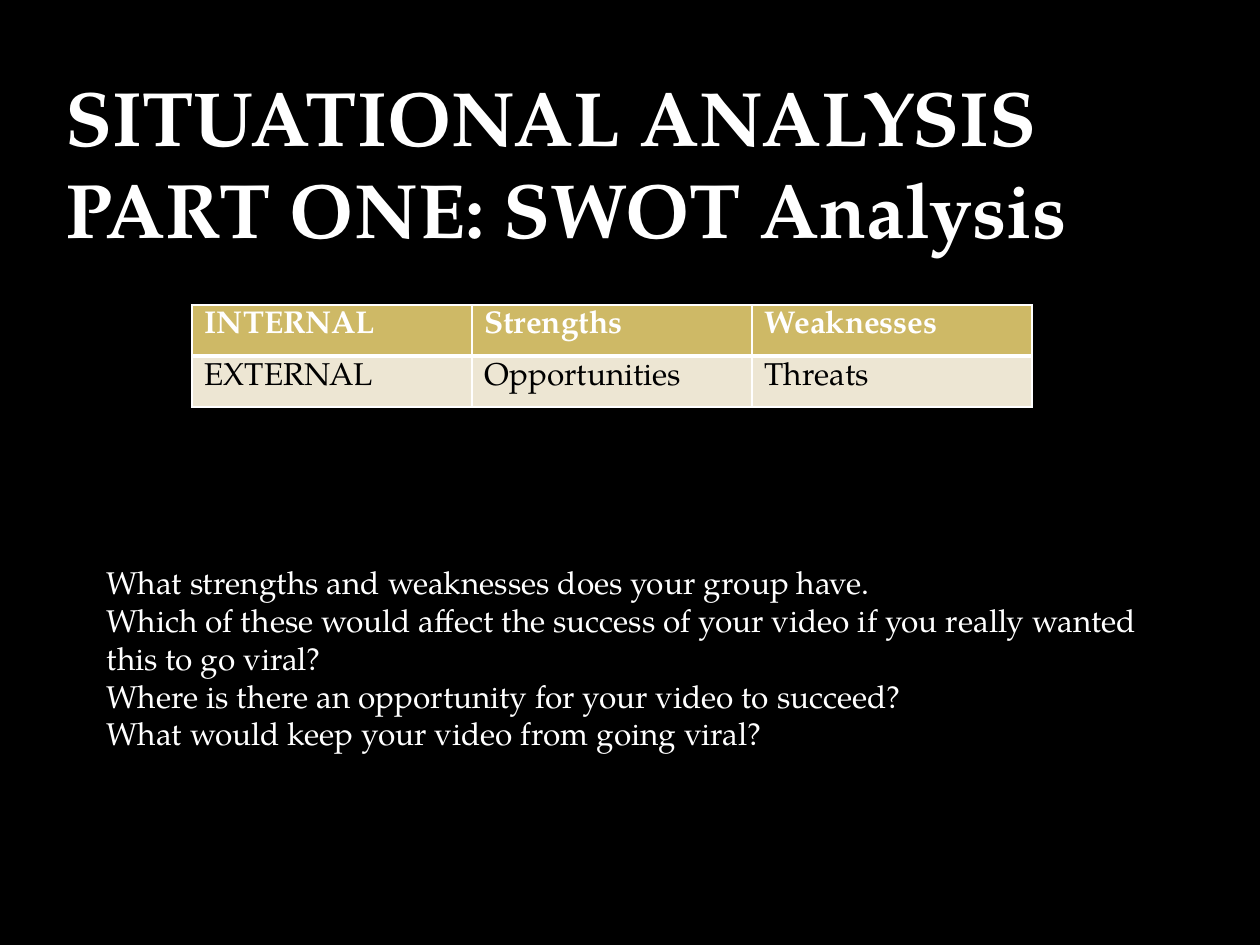
import pptx
import pptx.dml.color
import pptx.enum.text
import pptx.oxml.ns
import pptx.util
from lxml import etree

EMU_PER_PX = 914400 // 126
FONT = "TeX Gyre Pagella"
COLORS = {"background": "000000", "light": "FFFFFF", "dark": "000000",
          "header": "CEB966", "body": "EDE6D3"}
TITLE = ["SITUATIONAL ANALYSIS", "PART ONE: SWOT Analysis"]
SWOT = [["INTERNAL", "Strengths", "Weaknesses"],
        ["EXTERNAL", "Opportunities", "Threats"]]
QUESTIONS = [
    "What strengths and weaknesses does your group have.",
    "Which of these would affect the success of your video if you really wanted this to go viral?",
    "Where is there an opportunity for your video to succeed?",
    "What would keep your video from going viral?",
]


def px(length):
    return pptx.util.Emu(length * EMU_PER_PX)


def color(name):
    return pptx.dml.color.RGBColor.from_string(COLORS[name])


def write_text(text_frame, lines, size=18, fill="light", bold=False):
    for index, line in enumerate(lines):
        paragraph = text_frame.paragraphs[0] if index == 0 else text_frame.add_paragraph()
        paragraph.alignment = pptx.enum.text.PP_ALIGN.LEFT
        paragraph.line_spacing = 1.0
        paragraph.space_before = pptx.util.Pt(0)
        run = paragraph.add_run()
        run.text = line
        run.font.name = FONT
        run.font.size = pptx.util.Pt(size)
        run.font.bold = bold
        run.font.color.rgb = color(fill)


def place(shape, left, top, width, height):
    shape.left, shape.top = px(left), px(top)
    shape.width, shape.height = px(width), px(height)


def add_title(slide):
    title = slide.shapes.title
    place(title, 53, 63, 1045, 199)
    text_frame = title.text_frame
    text_frame.word_wrap = False
    text_frame.auto_size = pptx.enum.text.MSO_AUTO_SIZE.SHAPE_TO_FIT_TEXT
    text_frame.vertical_anchor = pptx.enum.text.MSO_ANCHOR.TOP
    write_text(text_frame, TITLE, size=44, bold=True)


def add_border(cell, side, width):
    properties = cell._tc.get_or_add_tcPr()
    line = etree.SubElement(properties, pptx.oxml.ns.qn(f"a:ln{side}"),
                            w=str(pptx.util.Pt(width)))
    fill = etree.SubElement(line, pptx.oxml.ns.qn("a:solidFill"))
    etree.SubElement(fill, pptx.oxml.ns.qn("a:srgbClr"), val=COLORS["light"])


def format_cell(cell, text, is_header):
    widths = {"L": 1, "R": 1, "T": 1 if is_header else 3, "B": 3 if is_header else 1}
    for side, width in widths.items():
        add_border(cell, side, width)
    cell.fill.solid()
    cell.fill.fore_color.rgb = color("header" if is_header else "body")
    write_text(cell.text_frame, [text], fill="light" if is_header else "dark", bold=is_header)


def add_swot_table(slide):
    column_width, row_height = 280, 51
    rows, columns = len(SWOT), len(SWOT[0])
    table = slide.shapes.add_table(rows, columns, px(192), px(305),
                                   px(column_width * columns), px(row_height * rows)).table
    for column in table.columns:
        column.width = px(column_width)
    for row_index, labels in enumerate(SWOT):
        table.rows[row_index].height = px(row_height)
        for column_index, label in enumerate(labels):
            format_cell(table.cell(row_index, column_index), label, row_index == 0)


def add_questions(slide):
    text_box = slide.shapes.add_textbox(px(94), px(557), px(1092), px(242))
    text_box.text_frame.word_wrap = True
    write_text(text_box.text_frame, QUESTIONS)


def main():
    presentation = pptx.Presentation()
    presentation.slide_width = pptx.util.Inches(10)
    presentation.slide_height = pptx.util.Inches(7.5)
    slide = presentation.slides.add_slide(presentation.slide_layouts.get_by_name("Title Only"))
    slide.background.fill.solid()
    slide.background.fill.fore_color.rgb = color("background")
    add_swot_table(slide)
    add_title(slide)
    add_questions(slide)
    presentation.save("out.pptx")


if __name__ == "__main__":
    main()
